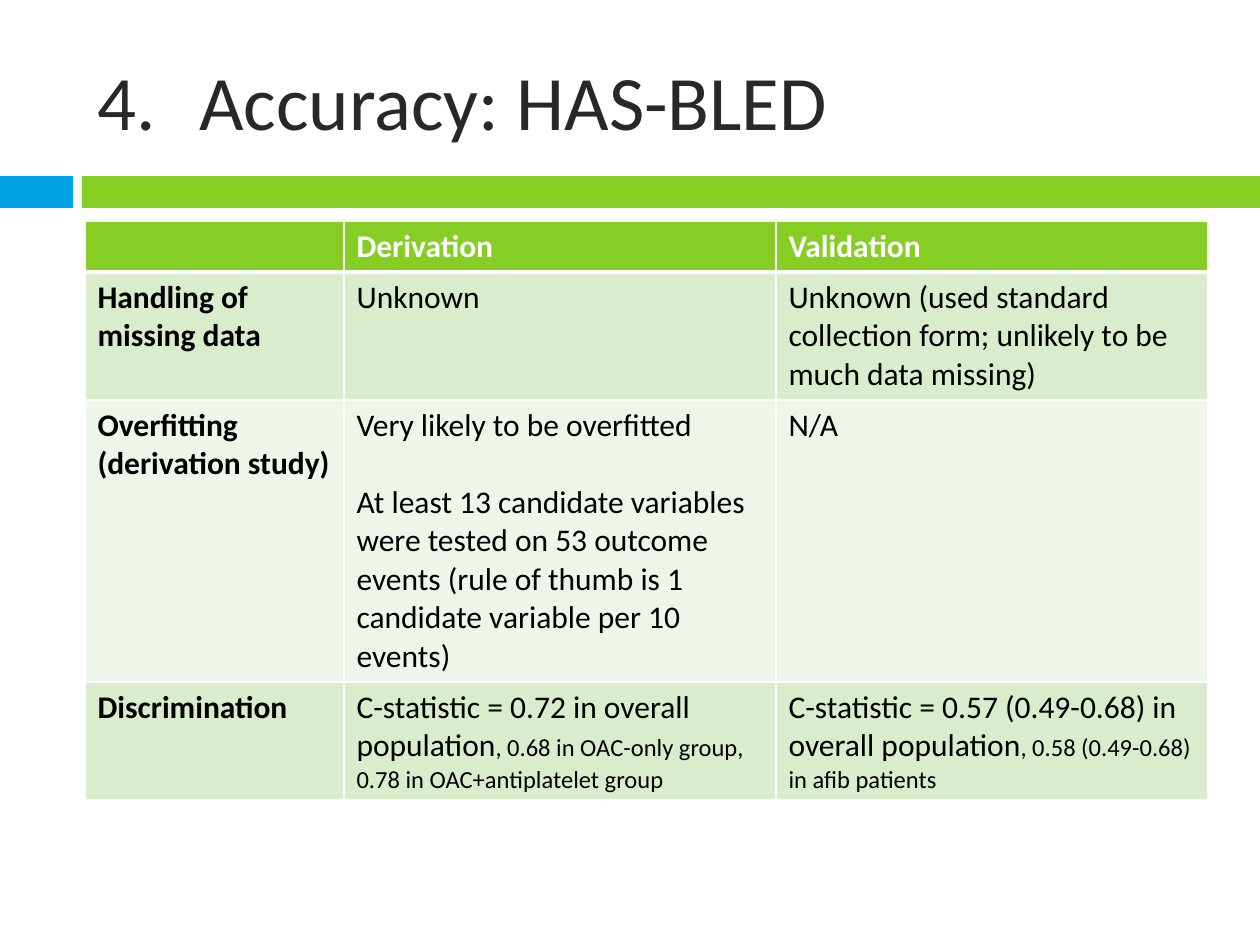
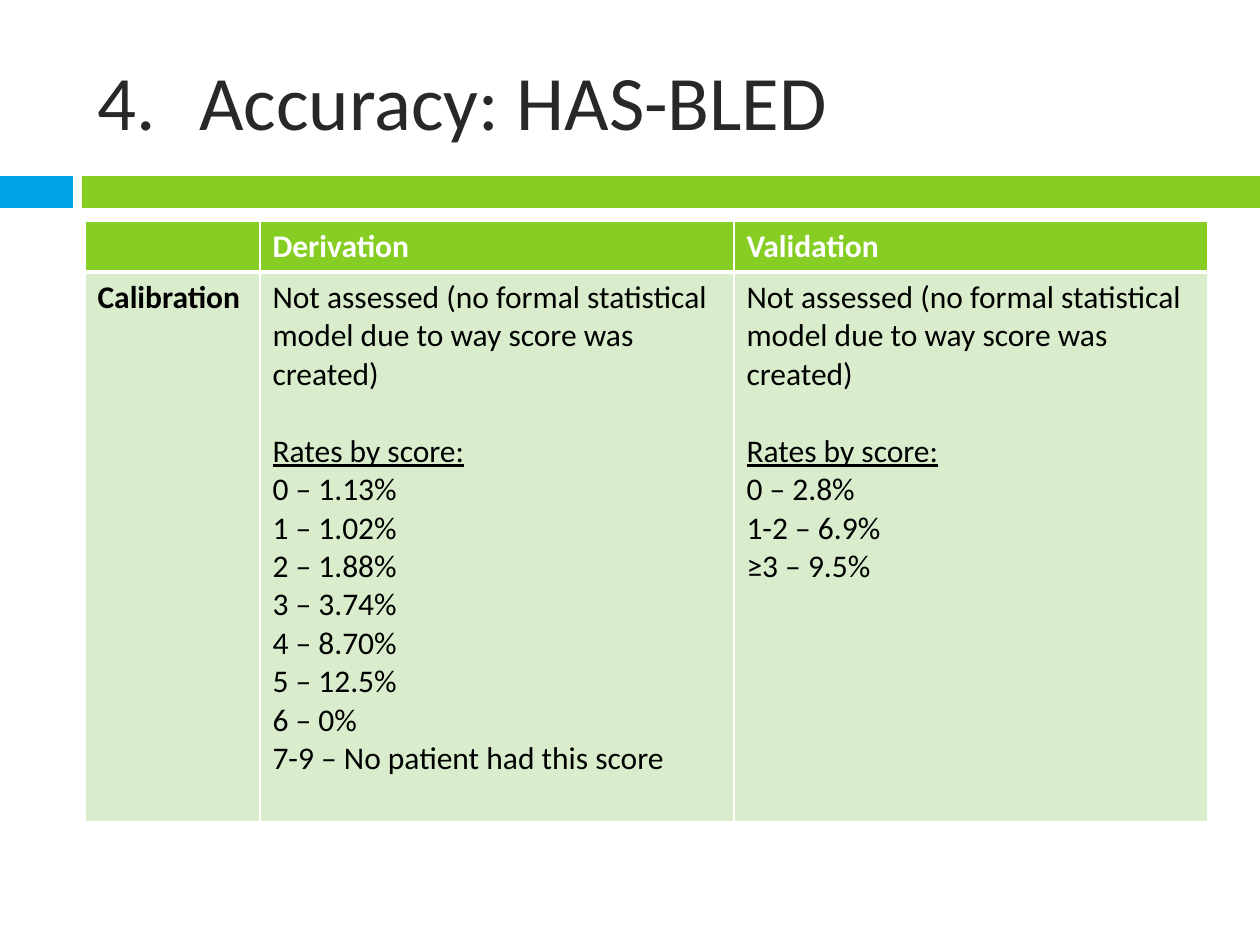
"""Build two slides on the accuracy of the HAS-BLED score."""
from lxml import etree
from pptx import Presentation
from pptx.dml.color import RGBColor
from pptx.enum.shapes import MSO_SHAPE
from pptx.enum.text import MSO_ANCHOR
from pptx.oxml.ns import qn
from pptx.util import Emu, Pt

RECTANGLE = MSO_SHAPE.RECTANGLE
MIDDLE = MSO_ANCHOR.MIDDLE

BLUE = RGBColor(0x00, 0xA2, 0xE6)
GREEN = RGBColor(0x86, 0xCE, 0x24)
PALE_GREEN = RGBColor(0xD9, 0xED, 0xCD)
PALEST_GREEN = RGBColor(0xED, 0xF6, 0xE8)
CHARCOAL = RGBColor(0x28, 0x28, 0x28)
BLACK = RGBColor(0x00, 0x00, 0x00)
WHITE = RGBColor(0xFF, 0xFF, 0xFF)

FONT = "Calibri"
TITLE = "Accuracy: HAS-BLED"
HEADER = ["", "Derivation", "Validation"]
RATES_HEADING = "Rates by score:"
NOT_ASSESSED = "Not assessed (no formal statistical model due to way score was created)"
BODY_SIZE, DETAIL_SIZE = Pt(18), Pt(14)
PARAGRAPH_GAP = Pt(22)
THIN, THICK = Pt(1), Pt(3)

LEFT, CONTENT_WIDTH = 85, 1123
TABLE_TOP = 221
TITLE_INDENT = 102
BANDS = [(0, 73, BLUE), (82, 1178, GREEN)]
GAP_STARTERS = ("At least", RATES_HEADING)


def px(length):
    return Emu(round(length * 914400 / 126))


def add_border(cell, side, width):
    line = etree.SubElement(cell._tc.get_or_add_tcPr(), qn(f"a:ln{side}"), w=str(width))
    fill = etree.SubElement(line, qn("a:solidFill"))
    etree.SubElement(fill, qn("a:srgbClr"), val=str(WHITE))


accuracy_rows = [
    HEADER,
    ["Handling of missing data", "Unknown",
     "Unknown (used standard collection form; unlikely to be much data missing)"],
    ["Overfitting\n(derivation study)",
     "Very likely to be overfitted\n"
     "At least 13 candidate variables were tested on 53 outcome events "
     "(rule of thumb is 1 candidate variable per 10 events)",
     "N/A"],
    ["Discrimination",
     "C-statistic = 0.72 in overall population"
     "|, 0.68 in OAC-only group, 0.78 in OAC+antiplatelet group",
     "C-statistic = 0.57 (0.49-0.68) in overall population"
     "|, 0.58 (0.49-0.68) in afib patients"],
]
derivation_rates = ["0 – 1.13%", "1 – 1.02%", "2 – 1.88%", "3 – 3.74%", "4 – 8.70%",
                    "5 – 12.5%", "6 – 0%", "7-9 – No patient had this score"]
validation_rates = ["0 – 2.8%", "1-2 – 6.9%", "≥3 – 9.5%"]
calibration_rows = [
    HEADER,
    ["Calibration"] + ["\n".join([NOT_ASSESSED, RATES_HEADING] + rates)
                       for rates in (derivation_rates, validation_rates)],
]
pages = [
    (accuracy_rows, [259, 432, 432], [51, 128, 282, 118]),
    (calibration_rows, [175, 474, 474], [51, 550]),
]

deck = Presentation()
deck.slide_width, deck.slide_height = px(1260), px(945)

for rows, column_widths, row_heights in pages:
    page = deck.slides.add_slide(deck.slide_layouts[6])

    for left, width, color in BANDS:
        band = page.shapes.add_shape(RECTANGLE, px(left), px(176), px(width), px(32))
        band.shadow.inherit = False
        band.fill.solid()
        band.fill.fore_color.rgb = color
        band.line.fill.background()

    box = page.shapes.add_textbox(px(LEFT), px(32), px(CONTENT_WIDTH), px(136))
    box.text_frame.word_wrap = True
    box.text_frame.vertical_anchor = MIDDLE
    para = box.text_frame.paragraphs[0]
    para.text = TITLE
    properties = para._p.get_or_add_pPr()
    properties.set("marL", str(px(TITLE_INDENT)))
    properties.set("indent", str(-px(TITLE_INDENT)))
    etree.SubElement(properties, qn("a:buFont"), typeface=FONT)
    etree.SubElement(properties, qn("a:buAutoNum"), type="arabicPeriod", startAt="4")
    para.font.name, para.font.size = FONT, Pt(44)
    para.font.color.rgb = CHARCOAL

    table = page.shapes.add_table(
        len(rows), len(HEADER), px(LEFT), px(TABLE_TOP),
        px(CONTENT_WIDTH), px(sum(row_heights))).table
    for column, width in zip(table.columns, column_widths):
        column.width = px(width)

    for row_index, texts in enumerate(rows):
        table.rows[row_index].height = px(row_heights[row_index])
        is_header = row_index == 0
        row_fill = GREEN if is_header else (PALEST_GREEN, PALE_GREEN)[row_index % 2]
        for column_index, text in enumerate(texts):
            cell = table.cell(row_index, column_index)
            add_border(cell, "L", THIN)
            add_border(cell, "R", THIN)
            add_border(cell, "T", THICK if row_index == 1 else THIN)
            add_border(cell, "B", THICK if is_header else THIN)
            cell.fill.solid()
            cell.fill.fore_color.rgb = row_fill

            for line_index, line in enumerate(text.split("\n")):
                frame = cell.text_frame
                para = frame.add_paragraph() if line_index else frame.paragraphs[0]
                if line.startswith(GAP_STARTERS):
                    para.space_before = PARAGRAPH_GAP
                para.font.name, para.font.size = FONT, BODY_SIZE
                para.font.bold = is_header or column_index == 0
                para.font.underline = line == RATES_HEADING
                para.font.color.rgb = WHITE if is_header else BLACK
                main_text, _, detail = line.partition("|")
                if main_text:
                    para.add_run().text = main_text
                if detail:
                    span = para.add_run()
                    span.text = detail
                    span.font.size = DETAIL_SIZE

deck.save("out.pptx")
